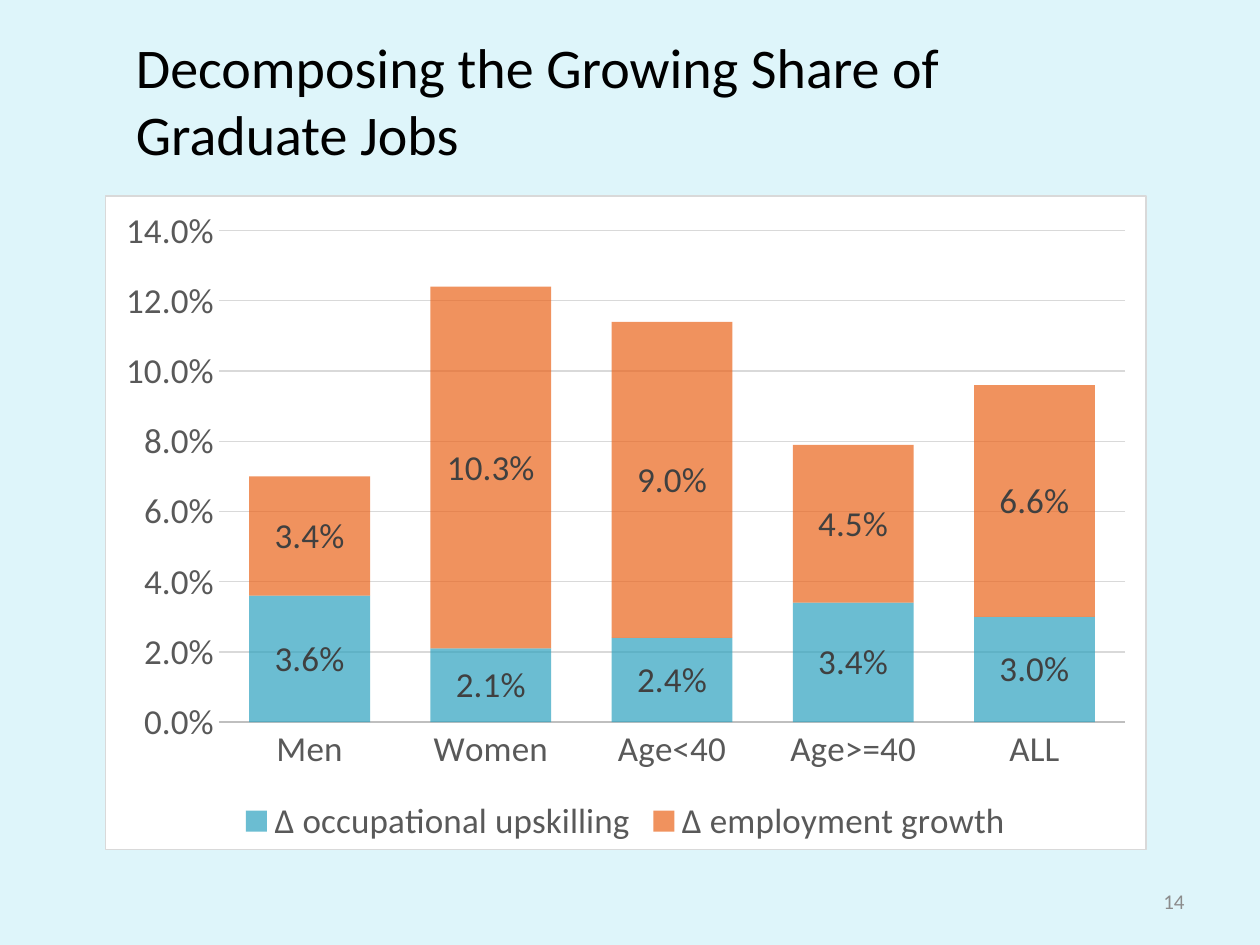
from lxml import etree
from pptx import Presentation
from pptx.chart.data import CategoryChartData
from pptx.dml.color import RGBColor
from pptx.enum.chart import XL_CHART_TYPE, XL_LEGEND_POSITION, XL_TICK_MARK
from pptx.enum.text import MSO_ANCHOR, PP_ALIGN
from pptx.oxml import parse_xml
from pptx.oxml.ns import nsdecls, qn
from pptx.util import Inches, Pt

BACKGROUND = RGBColor(0xDE, 0xF5, 0xFA)
BLACK = RGBColor(0x00, 0x00, 0x00)
PAGE_GRAY = RGBColor(0x8C, 0x8C, 0x8C)
AXIS_TEXT = RGBColor(0x59, 0x59, 0x59)
LABEL_TEXT = RGBColor(0x40, 0x40, 0x40)
AXIS_LINE = RGBColor(0xBF, 0xBF, 0xBF)
GRID_LINE = RGBColor(0xD9, 0xD9, 0xD9)
WHITE = RGBColor(0xFF, 0xFF, 0xFF)
TEAL = RGBColor(0x2D, 0xA2, 0xBF)
ORANGE = RGBColor(0xEB, 0x64, 0x1B)

FONT = "Calibri"
PERCENT = "0.0%"
OPACITY = 70

TITLE = "Decomposing the Growing Share of Graduate Jobs"
PAGE_NUMBER = "14"
GROUPS = ["Men", "Women", "Age<40", "Age>=40", "ALL"]
SERIES = [
    ("Δ occupational upskilling", (0.036, 0.021, 0.024, 0.034, 0.03), TEAL),
    ("Δ employment growth", (0.034, 0.103, 0.09, 0.045, 0.066), ORANGE),
]


def set_font(font, size, color):
    font.name = FONT
    font.size = Pt(size)
    font.color.rgb = color


def set_line(line, color):
    line.color.rgb = color
    line.width = Pt(0.75)


def add_text(slide, box, text, size, color, align=PP_ALIGN.LEFT, anchor=MSO_ANCHOR.TOP):
    tf = slide.shapes.add_textbox(*map(Inches, box)).text_frame
    tf.word_wrap = True
    tf.vertical_anchor = anchor
    p = tf.paragraphs[0]
    p.text = text
    p.alignment = align
    set_font(p.font, size, color)


def set_chart_frame(chart, fill, border):
    """Fill and outline the whole chart area, which has no public method."""
    chart.element.find(qn("c:chart")).addnext(parse_xml(
        f'<c:spPr {nsdecls("c", "a")}>'
        f'<a:solidFill><a:srgbClr val="{fill}"/></a:solidFill>'
        f'<a:ln w="{Pt(0.75)}"><a:solidFill><a:srgbClr val="{border}"/></a:solidFill></a:ln>'
        '</c:spPr>'))


def style_series(series, color):
    fill = series.format.fill
    fill.solid()
    fill.fore_color.rgb = color
    rgb = series.format.element.find(".//" + qn("a:srgbClr")) if hasattr(
        series.format, "element") else series._element.find(".//" + qn("a:srgbClr"))
    etree.SubElement(rgb, qn("a:alpha"), val=str(OPACITY * 1000))
    labels = series.data_labels
    labels.show_value = True
    labels.number_format = PERCENT
    labels.number_format_is_linked = False
    set_font(labels.font, 20, LABEL_TEXT)


def add_stacked_chart(slide, box):
    data = CategoryChartData(number_format=PERCENT)
    data.categories = GROUPS
    for name, values, _ in SERIES:
        data.add_series(name, values)
    chart = slide.shapes.add_chart(
        XL_CHART_TYPE.COLUMN_STACKED, *map(Inches, box), data).chart
    set_font(chart.font, 10, BLACK)
    set_chart_frame(chart, WHITE, GRID_LINE)
    chart.has_title = False
    chart.has_legend = True
    chart.legend.position = XL_LEGEND_POSITION.BOTTOM
    chart.legend.include_in_layout = False
    set_font(chart.legend.font, 20, AXIS_TEXT)

    plot = chart.plots[0]
    plot.gap_width = 50
    plot.overlap = 100
    plot.vary_by_categories = False
    for series, (_, _, color) in zip(plot.series, SERIES):
        style_series(series, color)

    for axis in (chart.category_axis, chart.value_axis):
        axis.major_tick_mark = axis.minor_tick_mark = XL_TICK_MARK.NONE
        set_font(axis.tick_labels.font, 20, AXIS_TEXT)
    set_line(chart.category_axis.format.line, AXIS_LINE)

    values = chart.value_axis
    values.minimum_scale, values.maximum_scale, values.major_unit = 0, 0.14, 0.02
    values.tick_labels.number_format = PERCENT
    values.tick_labels.number_format_is_linked = False
    values.format.line.fill.background()
    set_line(values.major_gridlines.format.line, GRID_LINE)


def main():
    prs = Presentation()
    prs.slide_width, prs.slide_height = Inches(10), Inches(7.5)
    s = prs.slides.add_slide(prs.slide_layouts[6])
    s.background.fill.solid()
    s.background.fill.fore_color.rgb = BACKGROUND

    add_text(s, (7.17, 6.95, 2.33, 0.4), PAGE_NUMBER, 12, PAGE_GRAY,
             PP_ALIGN.RIGHT, MSO_ANCHOR.MIDDLE)
    add_stacked_chart(s, (0.83, 1.55, 8.27, 5.2))
    add_text(s, (0.98, 0.21, 7.95, 1.18), TITLE, 32, BLACK)
    prs.save("out.pptx")


if __name__ == "__main__":
    main()
